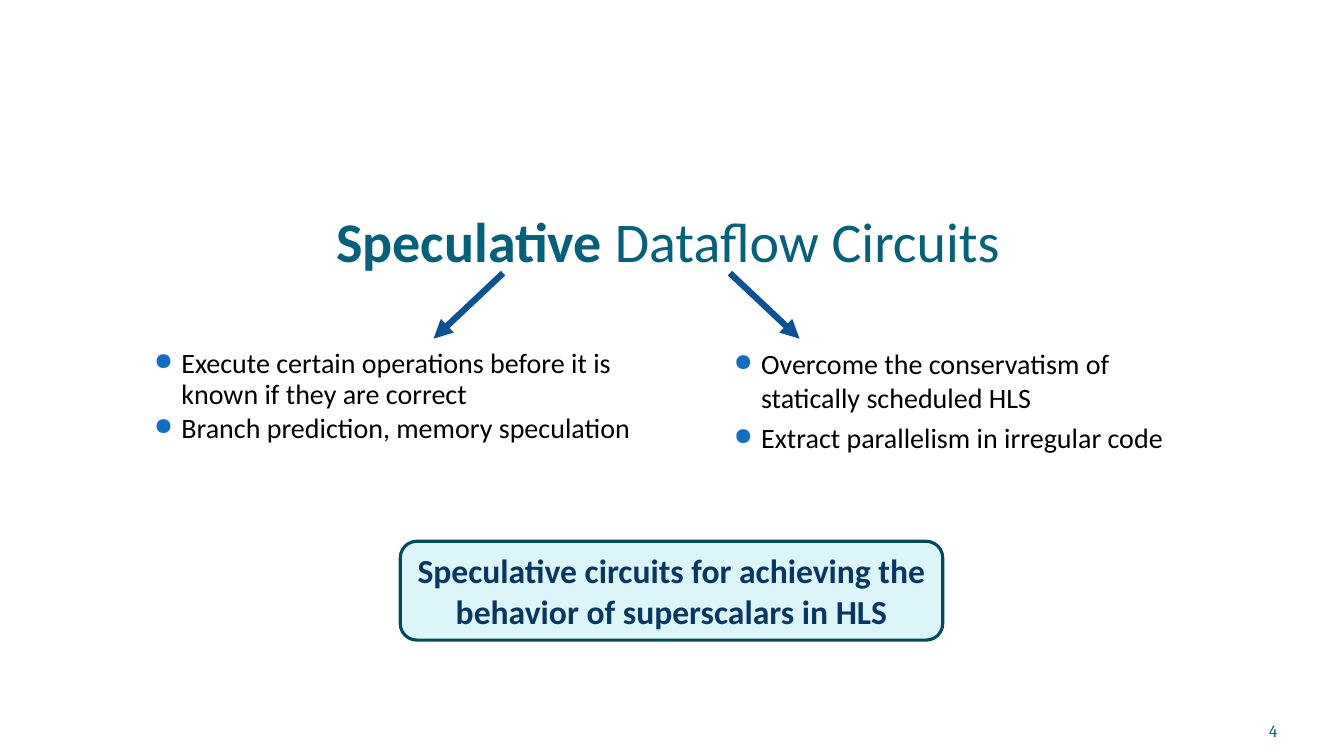
from lxml import etree
from pptx import Presentation
from pptx.dml.color import RGBColor
from pptx.enum.shapes import MSO_CONNECTOR, MSO_SHAPE
from pptx.enum.text import MSO_ANCHOR, PP_ALIGN
from pptx.oxml.ns import qn
from pptx.util import Pt

PX = 9144  # EMU per px, 100 px to the inch
WIDTH, HEIGHT = 1333, 750
STRAIGHT, ROUNDED = MSO_CONNECTOR.STRAIGHT, MSO_SHAPE.ROUNDED_RECTANGLE
TOP, MIDDLE, BOTTOM = MSO_ANCHOR.TOP, MSO_ANCHOR.MIDDLE, MSO_ANCHOR.BOTTOM
LEFT, CENTER, RIGHT = PP_ALIGN.LEFT, PP_ALIGN.CENTER, PP_ALIGN.RIGHT

COLORS = {
    "title": "04617B",
    "body": "000000",
    "bullet": "0F6FC6",
    "arrow": "095295",
    "box_fill": "DBF5F9",
    "box_line": "03495C",
    "box_text": "083763",
    "number": "045D75",
}


def color(name):
    return RGBColor.from_string(COLORS[name])


class SlideBuilder:
    def __init__(self, slide, font="Calibri"):
        self.shapes = slide.shapes
        self.font = font

    def set_frame(self, frame, anchor, insets):
        sides = ("margin_left", "margin_top", "margin_right", "margin_bottom")
        values = {side: inset * PX for side, inset in zip(sides, insets)}
        values.update(word_wrap=True, vertical_anchor=anchor)
        for name, value in values.items():
            setattr(frame, name, value)

    def add_run(self, paragraph, text, size, ink, bold=False, font=None):
        run = paragraph.add_run()
        run.text = text
        values = {"size": Pt(size), "bold": bold, "name": font or self.font}
        for name, value in values.items():
            setattr(run.font, name, value)
        run.font.color.rgb = color(ink)

    def text_frame(self, at, anchor=TOP, insets=(10, 5, 10, 5)):
        frame = self.shapes.add_textbox(*(v * PX for v in at)).text_frame
        self.set_frame(frame, anchor, insets)
        return frame

    def line(self, at, runs, size, ink, align, insets, font=None):
        paragraph = self.text_frame(at, BOTTOM, insets).paragraphs[0]
        paragraph.alignment = align
        for text, bold in runs:
            self.add_run(paragraph, text, size, ink, bold, font)

    def bullets(self, at, items, spacing, gap):
        frame = self.text_frame(at)
        for index, item in enumerate(items):
            paragraph = frame.add_paragraph() if index else frame.paragraphs[0]
            values = {"alignment": LEFT, "line_spacing": spacing, "space_after": Pt(gap)}
            for name, value in values.items():
                setattr(paragraph, name, value)
            self.add_run(paragraph, item, 20, "body")
            props = paragraph._p.get_or_add_pPr()
            props.set("marL", str(70 * PX))
            props.set("indent", str(-27 * PX))
            tint = etree.SubElement(props, qn("a:buClr"))
            etree.SubElement(tint, qn("a:srgbClr"), val=COLORS["bullet"])
            etree.SubElement(props, qn("a:buSzPct"), val="85000")
            etree.SubElement(props, qn("a:buChar"), char="●")

    def arrow(self, start, end):
        link = self.shapes.add_connector(STRAIGHT, *(v * PX for v in start + end))
        link.line.color.rgb = color("arrow")
        link.line.width = Pt(4.5)
        etree.SubElement(link.line._get_or_add_ln(), qn("a:tailEnd"), type="triangle")
        etree.SubElement(link._element.spPr, qn("a:effectLst"))

    def callout(self, at, text):
        box = self.shapes.add_shape(ROUNDED, *(v * PX for v in at))
        box.shadow.inherit = False
        box.fill.solid()
        box.fill.fore_color.rgb = color("box_fill")
        box.line.color.rgb = color("box_line")
        box.line.width = Pt(2.25)
        self.set_frame(box.text_frame, MIDDLE, (10, 5, 10, 5))
        paragraph = box.text_frame.paragraphs[0]
        paragraph.alignment = CENTER
        self.add_run(paragraph, text, 24, "box_text", True)


def main():
    deck = Presentation()
    deck.slide_width, deck.slide_height = WIDTH * PX, HEIGHT * PX
    page = SlideBuilder(deck.slides.add_slide(deck.slide_layouts[6]))

    # Title
    page.line((186, 68, 953, 204),
              [("Speculative", True), (" Dataflow Circuits", False)],
              40, "title", CENTER, (0, 5, 0, 0))

    # What each half of the title brings
    page.bullets((675, 339, 535, 276),
                 ["Overcome the conservatism of statically scheduled HLS",
                  "Extract parallelism in irregular code"], 1.0, 5)
    page.bullets((100, 342, 539, 223),
                 ["Execute certain operations before it is known if they are correct",
                  "Branch prediction, memory speculation"], 0.9, 3)

    # Arrows from the title to the lists
    for start_x, end_x in ((724, 793), (499, 430)):
        page.arrow((start_x, 271), (end_x, 336))

    # Conclusion
    page.callout((397, 537, 538, 98),
                 "Speculative circuits for achieving the behavior of superscalars in HLS")

    # Slide number
    page.line((1156, 695, 111, 40), [("4", False)], 12, "number", RIGHT,
              (0, 0, 0, 0), "Cambria")

    deck.save("out.pptx")


if __name__ == "__main__":
    main()
